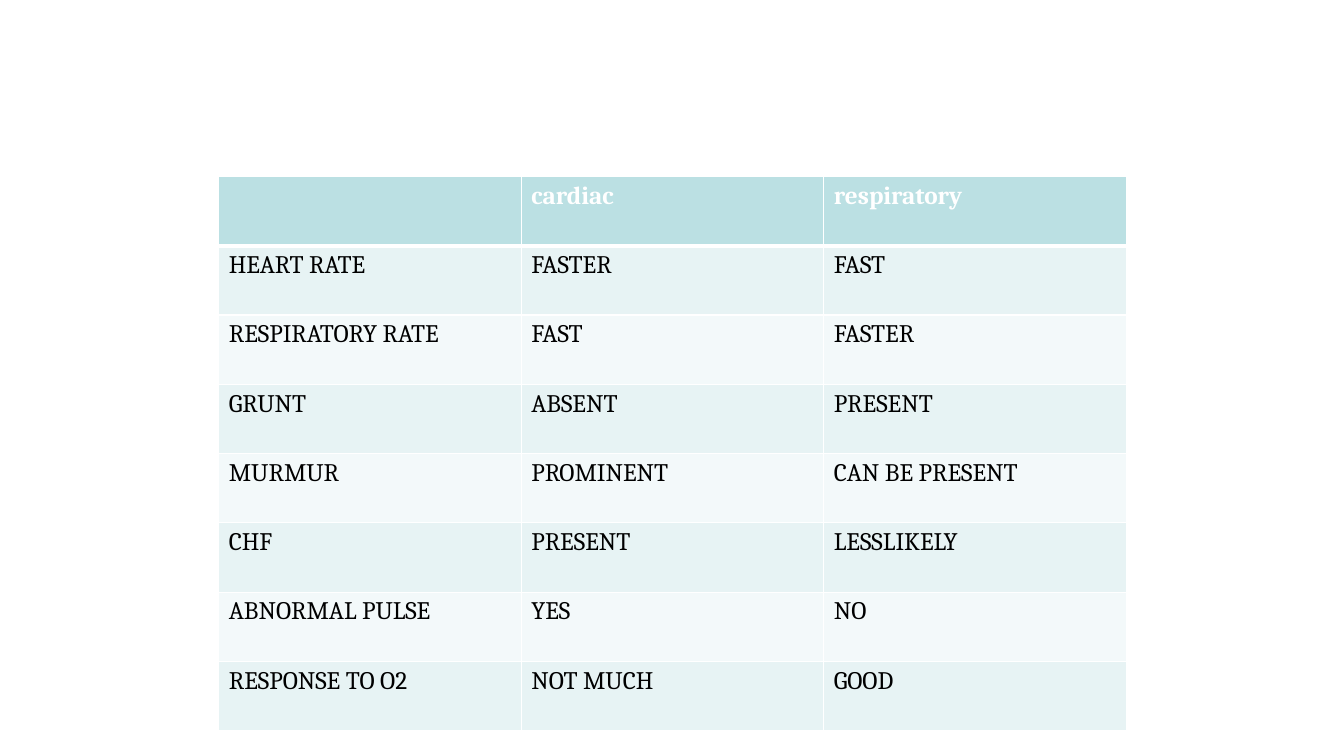
from lxml import etree
from pptx import Presentation
from pptx import util as u
from pptx.dml import color
from pptx.oxml import ns

COLORS = {
    "line": "FFFFFF",
    "header": "BBE0E3",
    "odd": "E7F3F4",
    "even": "F3F9FA",
    "header_text": "FFFFFF",
    "text": "000000",
}
ROWS = [
    ("", "cardiac", "respiratory"),
    ("HEART RATE", "FASTER", "FAST"),
    ("RESPIRATORY RATE", "FAST", "FASTER"),
    ("GRUNT", "ABSENT", "PRESENT"),
    ("MURMUR", "PROMINENT", "CAN BE PRESENT"),
    ("CHF", "PRESENT", "LESSLIKELY"),
    ("ABNORMAL PULSE", "YES", "NO"),
    ("RESPONSE TO O2", "NOT MUCH", "GOOD"),
]


def rgb(name):
    return color.RGBColor.from_string(COLORS[name])


def add_border(cell, side, points):
    tc_pr = cell._tc.get_or_add_tcPr()
    ln = etree.SubElement(tc_pr, ns.qn(f"a:ln{side}"), w=str(u.Pt(points)))
    fill = etree.SubElement(ln, ns.qn("a:solidFill"))
    etree.SubElement(fill, ns.qn("a:srgbClr"), val=COLORS["line"])


prs = Presentation()
prs.slide_width = u.Inches(13.33)
prs.slide_height = u.Inches(7.5)
s = prs.slides.add_slide(prs.slide_layouts[6])

# Comparison table with equal rows and columns
table = s.shapes.add_table(
    len(ROWS), len(ROWS[0]),
    u.Inches(2.17), u.Inches(1.75), u.Inches(9), u.Inches(5.5),
).table

for i, row in enumerate(ROWS):
    if i == 0:
        band = "header"
    else:
        band = "odd" if i % 2 else "even"
    for j, label in enumerate(row):
        cell = table.cell(i, j)

        # Thin white grid, thick rule under the header
        for side in "LRTB":
            thick = (i, side) in ((0, "B"), (1, "T"))
            add_border(cell, side, 3 if thick else 1)
        cell.fill.solid()
        cell.fill.fore_color.rgb = rgb(band)

        # Cell text
        p = cell.text_frame.paragraphs[0]
        p.text = label
        p.font.size = u.Pt(18)
        for r in p.runs:
            r.font.name = "Cambria"
            r.font.size = u.Pt(18)
            r.font.bold = i == 0
            r.font.color.rgb = rgb("text" if i else "header_text")

prs.save("out.pptx")
